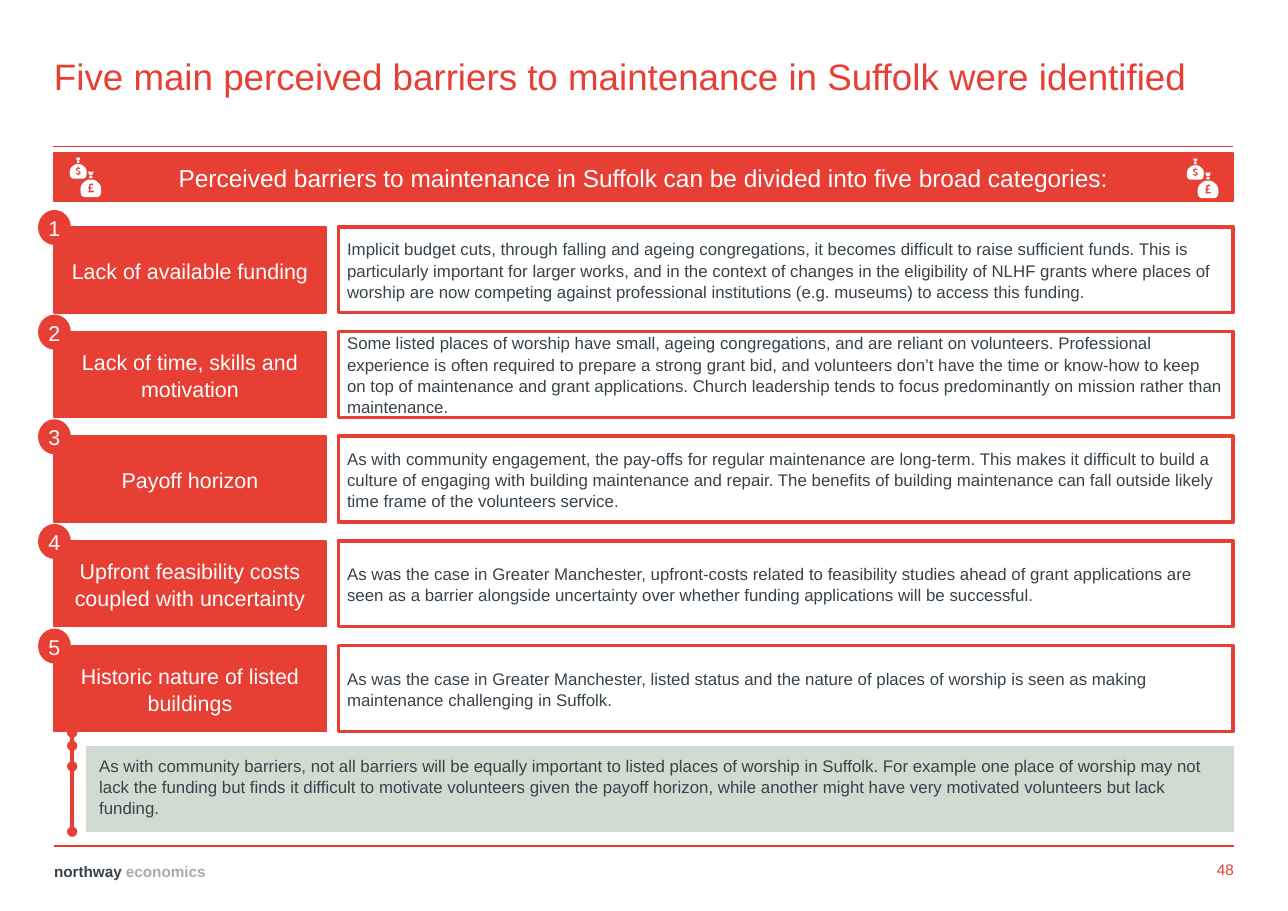
from dataclasses import dataclass

from lxml.etree import SubElement
from pptx import Presentation
from pptx.dml.color import RGBColor
from pptx.enum.shapes import MSO_CONNECTOR, MSO_SHAPE
from pptx.enum.text import MSO_ANCHOR, PP_ALIGN
from pptx.oxml.ns import qn
from pptx.shapes.autoshape import Shape
from pptx.slide import Slide
from pptx.util import Inches, Pt

RED = RGBColor(0xE8, 0x3F, 0x35)
RULE_RED = RGBColor(0xE7, 0x3A, 0x2F)
SLATE = RGBColor(0x37, 0x42, 0x4A)
GREY = RGBColor(0xA9, 0xAA, 0xAD)
SAGE = RGBColor(0xD1, 0xDB, 0xD2)
WHITE = RGBColor(0xFF, 0xFF, 0xFF)

LEFT = 0.49
FULL_WIDTH = 10.7
ROW_TOP, ROW_STEP, ROW_HEIGHT = 2.06, 0.95, 0.78

Points = list[tuple[float, float]]


@dataclass
class Box:
    left: float
    top: float
    width: float
    height: float


@dataclass
class TextStyle:
    size: float
    color: RGBColor
    align: PP_ALIGN = PP_ALIGN.LEFT
    anchor: MSO_ANCHOR = MSO_ANCHOR.MIDDLE
    inset_x: float = 0.08
    inset_y: float = 0.08
    spacing: float = 2
    wrap: bool = True


@dataclass
class Barrier:
    name: str
    detail: str


BARRIERS = [
    Barrier("Lack of available funding",
            "Implicit budget cuts, through falling and ageing congregations, it becomes difficult to raise "
            "sufficient funds. This is particularly important for larger works, and in the context of changes "
            "in the eligibility of NLHF grants where places of worship are now competing against professional "
            "institutions (e.g. museums) to access this funding."),
    Barrier("Lack of time, skills and motivation",
            "Some listed places of worship have small, ageing congregations, and are reliant on volunteers. "
            "Professional experience is often required to prepare a strong grant bid, and volunteers don’t have "
            "the time or know-how to keep on top of maintenance and grant applications. Church leadership tends "
            "to focus predominantly on mission rather than maintenance."),
    Barrier("Payoff horizon",
            "As with community engagement, the pay-offs for regular maintenance are long-term. This makes it "
            "difficult to build a culture of engaging with building maintenance and repair. The benefits of "
            "building maintenance can fall outside likely time frame of the volunteers service."),
    Barrier("Upfront feasibility costs coupled with uncertainty",
            "As was the case in Greater Manchester, upfront-costs related to feasibility studies ahead of grant "
            "applications are seen as a barrier alongside uncertainty over whether funding applications will be "
            "successful."),
    Barrier("Historic nature of listed buildings",
            "As was the case in Greater Manchester, listed status and the nature of places of worship is seen as "
            "making maintenance challenging in Suffolk."),
]
CALLOUT_TEXT = (
    "As with community barriers, not all barriers will be equally important to listed places of worship in "
    "Suffolk. For example one place of worship may not lack the funding but finds it difficult to motivate "
    "volunteers given the payoff horizon, while another might have very motivated volunteers but lack funding.")

# Money bag outlines in thousandths of an inch; each bag part is a right half.
BAG_HALVES: list[Points] = [
    [(0, 3), (20, 0), (48, 12), (75, 35), (90, 60), (94, 90), (93, 120), (83, 148), (60, 160)],
    [(0, -37), (11, -33), (15, -23), (11, -13), (0, -9)],
    [(0, -72), (25, -72), (15, -42), (0, -42)],
]
POUND: Points = [
    (-28, 72), (-18, 72), (-18, 58), (-12, 42), (5, 34), (25, 40), (18, 54), (5, 50), (-3, 58), (-3, 72),
    (14, 72), (14, 83), (-3, 83), (-3, 102), (27, 102), (27, 116), (-28, 116), (-18, 104), (-18, 83), (-28, 83)]
DOLLAR: Points = [
    (25, 45), (4, 36), (4, 25), (-4, 25), (-4, 36), (-22, 44), (-27, 58), (-20, 72), (8, 86), (10, 96),
    (0, 103), (-20, 95), (-28, 107), (-4, 117), (-4, 128), (4, 128), (4, 117), (22, 110), (28, 94), (20, 78),
    (-8, 66), (-9, 55), (0, 50), (17, 57)]


def write_text(shape: Shape, spans: list[tuple[str, RGBColor, bool]], style: TextStyle) -> None:
    frame = shape.text_frame
    frame.word_wrap = style.wrap
    frame.vertical_anchor = style.anchor
    frame.margin_left = frame.margin_right = Inches(style.inset_x)
    frame.margin_top = frame.margin_bottom = Inches(style.inset_y)
    para = frame.paragraphs[0]
    para.alignment = style.align
    para.line_spacing = 1.05
    para.space_before = para.space_after = Pt(style.spacing)
    for text, color, bold in spans:
        span = para.add_run()
        span.text = text
        span.font.name = "Arial"
        span.font.size = Pt(style.size)
        span.font.bold = bold
        span.font.color.rgb = color


def add_text(page: Slide, box: Box, spans: list[tuple[str, RGBColor, bool]], style: TextStyle) -> None:
    shape = page.shapes.add_textbox(Inches(box.left), Inches(box.top), Inches(box.width), Inches(box.height))
    write_text(shape, spans, style)


def add_panel(page: Slide, kind: MSO_SHAPE, box: Box, fill: RGBColor | None, line_width: float,
              text: str, style: TextStyle) -> Shape:
    shape = page.shapes.add_shape(
        kind, Inches(box.left), Inches(box.top), Inches(box.width), Inches(box.height))
    shape.shadow.inherit = False
    if fill is None:
        shape.fill.background()
    else:
        shape.fill.solid()
        shape.fill.fore_color.rgb = fill
    shape.line.color.rgb = RED
    shape.line.width = Pt(line_width)
    write_text(shape, [(text, style.color, False)], style)
    return shape


def add_rule(page: Slide, left: float, top: float) -> None:
    rule = page.shapes.add_connector(
        MSO_CONNECTOR.STRAIGHT, Inches(left), Inches(top), Inches(left + 10.71), Inches(top))
    rule.line.color.rgb = RULE_RED
    rule.line.width = Pt(1)
    SubElement(rule._element.spPr, qn("a:effectLst"))


def bag_contours(center: float, top: float, scale: float, symbol: Points) -> list[Points]:
    parts = [half + [(-x, y) for x, y in reversed(half)] for half in BAG_HALVES]
    return [[(center + x * scale, top + y * scale) for x, y in part] for part in parts + [symbol]]


def add_money_bags(page: Slide, left: float, top: float) -> None:
    contours = bag_contours(195, 200, 1, POUND) + bag_contours(80, 60, 0.82, DOLLAR)
    builder = page.shapes.build_freeform(*contours[0][0], scale=Inches(1) / 1000)
    for contour in contours:
        builder.move_to(*contour[0])
        builder.add_line_segments(contour[1:], close=True)
    bags = builder.convert_to_shape(Inches(left), Inches(top))
    bags.shadow.inherit = False
    bags.fill.solid()
    bags.fill.fore_color.rgb = WHITE
    bags.line.fill.background()


def add_callout(page: Slide) -> None:
    style = TextStyle(11, SLATE, anchor=MSO_ANCHOR.TOP, inset_x=0.12)
    callout = add_panel(page, MSO_SHAPE.LINE_CALLOUT_2_ACCENT_BAR, Box(0.78, 6.77, 10.42, 0.78),
                        SAGE, 2.25, CALLOUT_TEXT, style)
    for index, value in enumerate([0.24, -0.012, -0.09, -0.012, -0.15, -0.012]):
        callout.adjustments[index] = value
    line = callout.line._get_or_add_ln()
    for end in ("a:headEnd", "a:tailEnd"):
        SubElement(line, qn(end), type="oval")


def main() -> None:
    deck = Presentation()
    deck.slide_width, deck.slide_height = Inches(11.69), Inches(8.27)
    page = deck.slides.add_slide(deck.slide_layouts[6])

    add_rule(page, LEFT, 7.68)
    add_rule(page, 0.48, 1.33)
    footer = TextStyle(10, SLATE, anchor=MSO_ANCHOR.BOTTOM, inset_x=0, inset_y=0, wrap=False)
    add_text(page, Box(LEFT, 7.79, 1.38, 0.2),
             [("northway ", SLATE, True), ("economics", GREY, True)], footer)
    footer.align = PP_ALIGN.RIGHT
    add_text(page, Box(10.9, 7.78, 0.3, 0.2), [("48", RED, False)], footer)
    add_text(page, Box(LEFT, 0.47, FULL_WIDTH, 0.85),
             [("Five main perceived barriers to maintenance in Suffolk were identified", RED, False)],
             TextStyle(24, RED, anchor=MSO_ANCHOR.TOP, inset_x=0, inset_y=0, spacing=0))

    add_panel(page, MSO_SHAPE.RECTANGLE, Box(LEFT, 1.39, FULL_WIDTH, 0.44), RED, 1,
              "Perceived barriers to maintenance in Suffolk can be divided into five broad categories:",
              TextStyle(16, WHITE, PP_ALIGN.CENTER))
    add_money_bags(page, 0.63, 1.43)
    add_money_bags(page, 10.77, 1.44)

    name_style = TextStyle(14, WHITE, PP_ALIGN.CENTER)
    badge_style = TextStyle(14, WHITE, PP_ALIGN.CENTER, inset_x=0, inset_y=0)
    add_callout(page)
    for index, barrier in enumerate(BARRIERS):
        top = ROW_TOP + index * ROW_STEP
        add_panel(page, MSO_SHAPE.RECTANGLE, Box(LEFT, top, 2.47, ROW_HEIGHT), RED, 1, barrier.name, name_style)
        add_panel(page, MSO_SHAPE.OVAL, Box(0.36, top - 0.14, 0.27, 0.29), RED, 2, str(index + 1), badge_style)
        add_panel(page, MSO_SHAPE.RECTANGLE, Box(3.07, top, 8.12, ROW_HEIGHT), None, 2.25,
                  barrier.detail, TextStyle(11, SLATE))

    deck.save("out.pptx")


if __name__ == "__main__":
    main()
